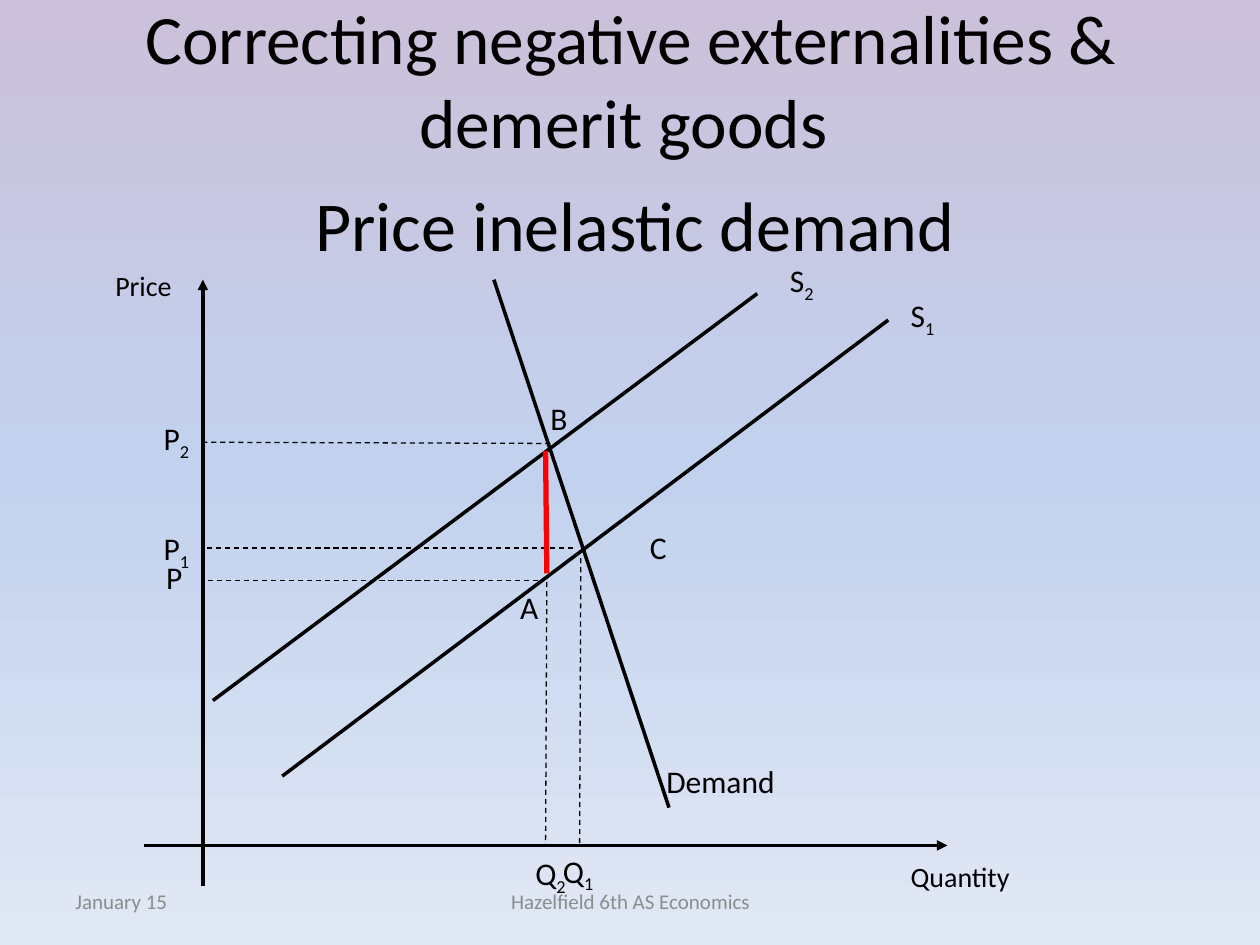
from dataclasses import dataclass
from typing import Optional

from lxml import etree
from pptx import Presentation
from pptx.dml.color import RGBColor
from pptx.enum.dml import MSO_LINE
from pptx.enum.shapes import MSO_CONNECTOR
from pptx.enum.text import MSO_ANCHOR, MSO_AUTO_SIZE, PP_ALIGN
from pptx.oxml.ns import qn
from pptx.util import Inches, Pt

LEFT, CENTER, RIGHT = PP_ALIGN.LEFT, PP_ALIGN.CENTER, PP_ALIGN.RIGHT
TOP, MIDDLE = MSO_ANCHOR.TOP, MSO_ANCHOR.MIDDLE
GROW, FIXED = MSO_AUTO_SIZE.SHAPE_TO_FIT_TEXT, MSO_AUTO_SIZE.NONE
STRAIGHT = MSO_CONNECTOR.STRAIGHT
DASH = MSO_LINE.DASH

FONT = "Calibri"
COLORS = {
    "ink": "000000", "footer": "8C8C8C", "tax": "FF0000",
    "bg_top": "CCC1DA", "bg_mid": "C2D1ED", "bg_end": "E1E8F5",
}
AXIS_X, AXIS_Y = 1.61, 6.71  # where the two axes cross


@dataclass
class Line:
    x1: float
    y1: float
    x2: float
    y2: float
    width: float = 2
    color: str = "ink"
    dashed: bool = False
    arrow: Optional[str] = None  # "headEnd" or "tailEnd"


@dataclass
class Label:
    text: str  # "_" starts a subscript
    x: float
    y: float
    w: float


def guide(x1: float, y1: float, x2: float, y2: float) -> Line:
    return Line(x1, y1, x2, y2, width=0.75, dashed=True)


AXES = [
    Line(AXIS_X, 2.22, AXIS_X, 7.03, arrow="headEnd"),
    Line(1.14, AXIS_Y, 7.52, AXIS_Y, arrow="tailEnd"),
]
CURVES = [
    Line(7.05, 2.54, 2.24, 6.16),  # S1
    Line(6.01, 2.33, 1.69, 5.56),  # S2
    Line(3.92, 2.22, 5.31, 6.41),  # demand
]
GUIDES = [
    guide(4.61, 4.43, 4.6, AXIS_Y),
    guide(4.34, 4.62, 4.33, AXIS_Y),
    guide(4.55, 4.35, AXIS_X, 4.35),
    guide(4.44, 3.52, AXIS_X, 3.51),
    guide(4.27, 4.61, AXIS_X, 4.61),
]
TAX = Line(4.33, 3.58, 4.34, 4.55, width=3, color="tax")
LABELS = [
    Label("S_1", 7.13, 2.3, 0.4), Label("S_2", 6.17, 2.02, 0.4),
    Label("Demand", 5.19, 6, 1.07),
    Label("Q_1", 4.37, 6.71, 0.46), Label("Q_2", 4.15, 6.73, 0.46),
    Label("P_1", 1.2, 4.15, 0.42), Label("P_2", 1.2, 3.28, 0.42),
    Label("P", 1.22, 4.38, 0.33), Label("A", 4.03, 4.62, 0.35),
    Label("B", 4.27, 3.12, 0.34), Label("C", 5.06, 4.14, 0.34),
]


def rgb(name: str) -> RGBColor:
    return RGBColor.from_string(COLORS[name])


def paint_background(s) -> None:
    fill = s.background.fill
    fill.gradient()
    fill.gradient_angle = 270
    stops = s.background._cSld.find(".//" + qn("a:gsLst"))
    for stop in list(stops):
        stops.remove(stop)
    for pos, name in ((0, "bg_top"), (50, "bg_mid"), (100, "bg_end")):
        stop = etree.SubElement(stops, qn("a:gs"), pos=str(pos * 1000))
        etree.SubElement(stop, qn("a:srgbClr"), val=COLORS[name])


def add_text(s, text: str, x: float, y: float, w: float, h: float, *,
             size: float = 18, color: str = "ink", align=LEFT, anchor=TOP,
             wrap: bool = True, fit=FIXED) -> None:
    box = s.shapes.add_textbox(Inches(x), Inches(y), Inches(w), Inches(h))
    tf = box.text_frame
    tf.word_wrap = wrap
    tf.auto_size = fit
    tf.vertical_anchor = anchor
    p = tf.paragraphs[0]
    p.alignment = align
    for i, part in enumerate(text.split("_")):
        r = p.add_run()
        r.text = part
        r.font.name = FONT
        r.font.size = Pt(size)
        r.font.color.rgb = rgb(color)
        if i:
            r.font._element.set("baseline", "-25000")


def add_line(s, line: Line) -> None:
    c = s.shapes.add_connector(STRAIGHT, Inches(line.x1), Inches(line.y1),
                               Inches(line.x2), Inches(line.y2))
    c.line.color.rgb = rgb(line.color)
    c.line.width = Pt(line.width)
    if line.dashed:
        c.line.dash_style = DASH
    if line.arrow:
        etree.SubElement(c.line._get_or_add_ln(), qn("a:" + line.arrow),
                         type="triangle")
    etree.SubElement(c._element.spPr, qn("a:effectLst"))


def main() -> None:
    prs = Presentation()
    prs.slide_width, prs.slide_height = Inches(10), Inches(7.5)
    s = prs.slides.add_slide(prs.slide_layouts[6])
    paint_background(s)

    # Title and subtitle
    add_text(s, "Correcting negative externalities & demerit goods ",
             0.51, 0, 9, 1.25, size=39.6, align=CENTER, anchor=MIDDLE)
    add_text(s, "Price inelastic demand", 0.51, 1.39, 9.06, 5.51,
             size=40, align=CENTER)

    # Footer
    add_text(s, "January 15", 0.5, 6.95, 2.33, 0.4,
             size=12, color="footer", anchor=MIDDLE)
    add_text(s, "Hazelfield 6th AS Economics", 3.42, 6.95, 3.17, 0.4,
             size=12, color="footer", align=CENTER, anchor=MIDDLE)

    # Diagram lines
    for line in [*AXES, *CURVES, *GUIDES, TAX]:
        add_line(s, line)

    # Axis titles and point labels
    add_text(s, "Price", 0.28, 2.08, 1.18, 0.37, size=16, align=RIGHT, fit=GROW)
    add_text(s, "Quantity", 7.13, 6.77, 1.5, 0.37, size=16, fit=GROW)
    for label in LABELS:
        add_text(s, label.text, label.x, label.y, label.w, 0.4,
                 wrap=False, fit=GROW)

    prs.save("out.pptx")


if __name__ == "__main__":
    main()
